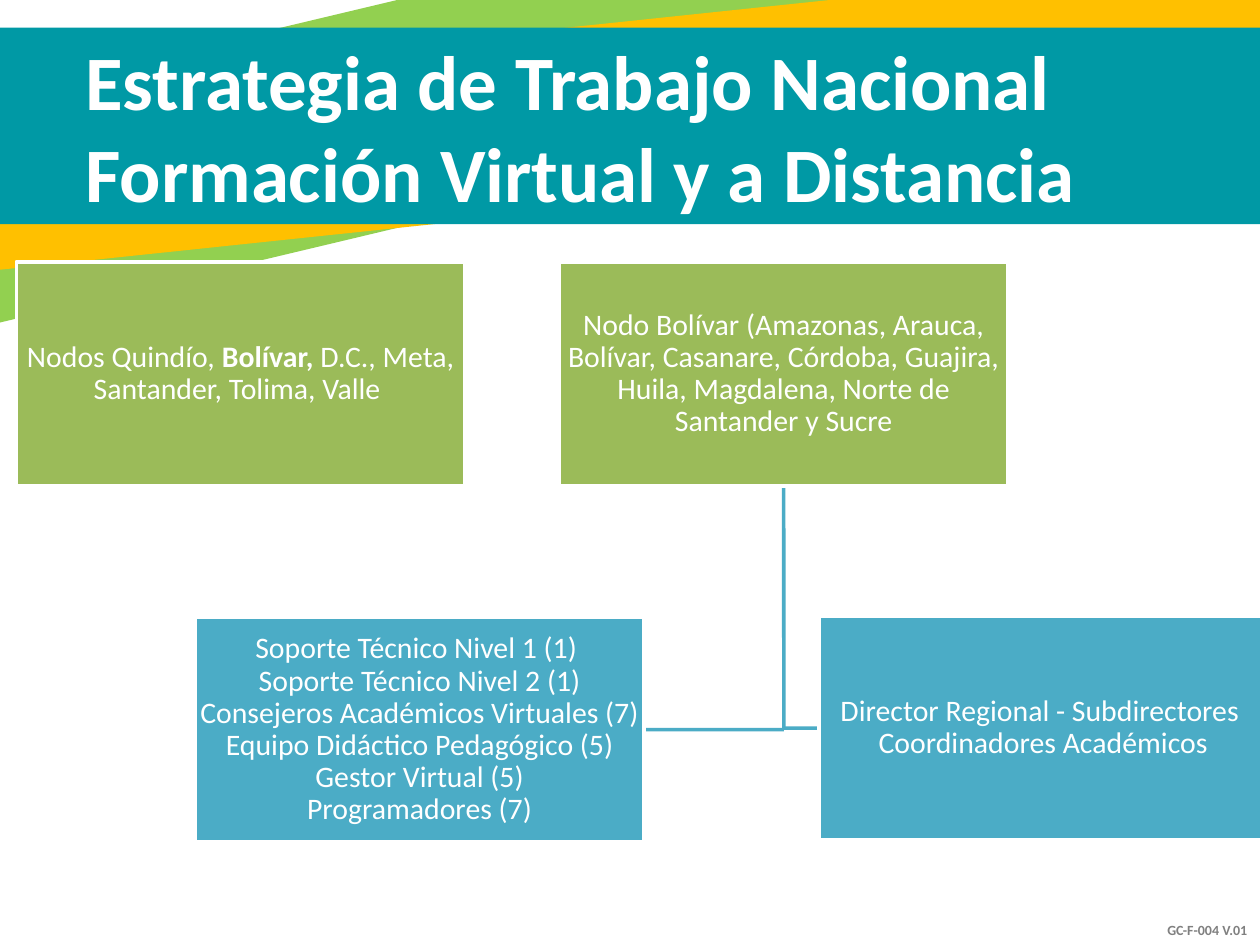
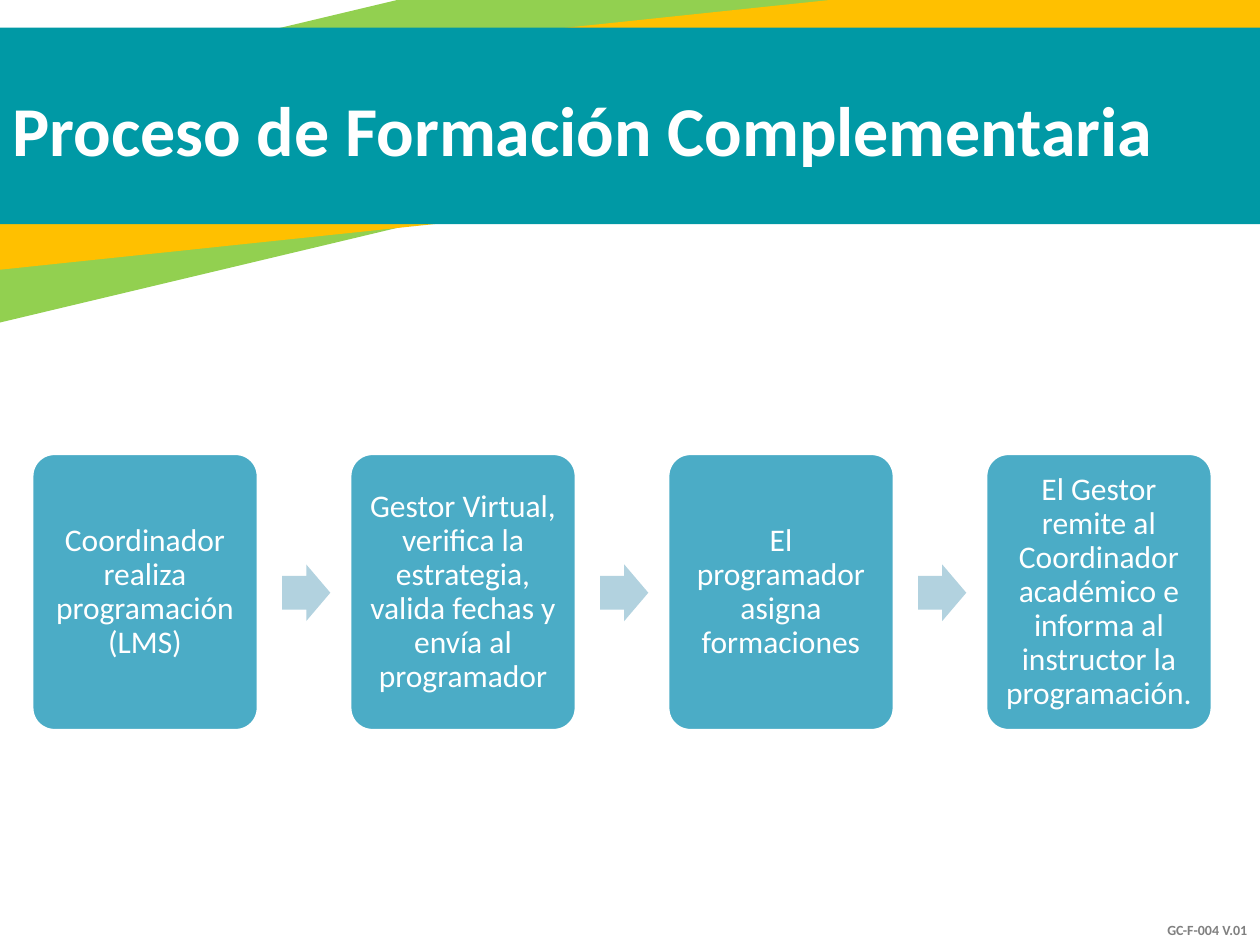
from dataclasses import dataclass

from lxml import etree
from pptx import Presentation
from pptx.dml.color import RGBColor
from pptx.enum import shapes, text
from pptx.oxml import ns
from pptx.util import Cm, Pt


@dataclass(frozen=True)
class Theme:
    font: str = "Calibri"
    white: str = "FFFFFF"
    lime: str = "92D050"
    amber: str = "FFC000"
    teal: str = "0099A5"
    node_green: str = "9BBB59"
    blue: str = "4BACC6"
    pale_blue: str = "B2D2DF"
    gray: str = "808080"
    strategy_title: int = 44
    process_title: int = 40
    step_size: int = 18
    node_size: int = 17
    code_size: int = 8
    line_width: int = 2


@dataclass(frozen=True)
class Area:
    left: float
    top: float
    width: float
    height: float

    def lengths(self) -> tuple:
        return Cm(self.left), Cm(self.top), Cm(self.width), Cm(self.height)


@dataclass(frozen=True)
class Band:
    area: Area
    color: str
    rotation: float = 0


@dataclass(frozen=True)
class Node:
    left: float
    top: float
    color: str
    words: str


THEME = Theme()
RECTANGLE = shapes.MSO_SHAPE.RECTANGLE
CENTER = text.PP_ALIGN.CENTER

BANDS = (
    Band(Area(-6.38, -0.46, 33.17, 4.47), THEME.lime, -13.4),
    Band(Area(-2.79, 0.51, 29.54, 3.66), THEME.amber, -6),
    Band(Area(-2.69, 0.56, 29.54, 3.96), THEME.teal),
)
FORM_CODE = Area(21.26, 17.6, 4.14, 1.45)

NODE_WIDTH, NODE_HEIGHT = 9.04, 4.52
NATIONAL = Node(0.33, 5.28, THEME.node_green,
                "Nodos Quindío, **Bolívar, **D.C., Meta, Santander, Tolima, Valle ")
REGIONAL = Node(11.28, 5.28, THEME.node_green,
                "Nodo Bolívar (Amazonas, Arauca, Bolívar, Casanare, Córdoba, "
                "Guajira, Huila, Magdalena, Norte de Santander y Sucre")
SUPPORT = Node(3.94, 12.45, THEME.blue,
               "Soporte Técnico Nivel 1 (1) \nSoporte Técnico Nivel 2 (1)\n"
               "Consejeros Académicos Virtuales (7)\n"
               "Equipo Didáctico Pedagógico (5)\nGestor Virtual (5)\nProgramadores (7)")
DIRECTORS = Node(16.51, 12.42, THEME.blue,
                 "Director Regional - Subdirectores \nCoordinadores Académicos")

STEPS = (
    "Coordinador realiza programación (LMS)",
    "Gestor Virtual, verifica la estrategia, valida fechas y envía al programador",
    "El programador asigna formaciones",
    "El Gestor remite al Coordinador académico e informa al instructor la programación.",
)
FIRST_STEP = Area(0.64, 9.14, 4.57, 5.59)
FIRST_ARROW = Area(5.69, 11.38, 0.97, 1.14)
STEP_PITCH = 6.41


def rgb(color: str) -> RGBColor:
    return RGBColor.from_string(color)


def write(shape, words: str, *, size: int, color: str = THEME.white, bold: bool = False,
          align=text.PP_ALIGN.LEFT, anchor=text.MSO_ANCHOR.MIDDLE,
          margins: tuple = (0.25, 0.13), spacing: float = 1.0) -> None:
    frame = shape.text_frame
    frame.word_wrap = True
    frame.auto_size = text.MSO_AUTO_SIZE.NONE
    frame.vertical_anchor = anchor
    frame.margin_left = frame.margin_right = Cm(margins[0])
    frame.margin_top = frame.margin_bottom = Cm(margins[1])
    paragraph = frame.paragraphs[0]
    paragraph.alignment = align
    paragraph.line_spacing = spacing
    for row, line in enumerate(words.split("\n")):
        if row:
            paragraph.add_line_break()
        for index, part in enumerate(line.split("**")):
            run = paragraph.add_run()
            run.text = part
            run.font.name = THEME.font
            run.font.size = Pt(size)
            run.font.bold = bold or index % 2 == 1
            run.font.color.rgb = rgb(color)


def draw_shape(slide, kind, area: Area, color: str, outlined: bool = False):
    shape = slide.shapes.add_shape(kind, *area.lengths())
    shape.shadow.inherit = False
    shape.fill.solid()
    shape.fill.fore_color.rgb = rgb(color)
    if outlined:
        shape.line.color.rgb = rgb(THEME.white)
        shape.line.width = Pt(THEME.line_width)
    else:
        shape.line.fill.background()
    return shape


def start_slide(deck, heading: str, area: Area, size: int):
    slide = deck.slides.add_slide(deck.slide_layouts[5])
    form_code = slide.shapes.add_textbox(*FORM_CODE.lengths())
    write(form_code, "GC-F-004 V.01", size=THEME.code_size, color=THEME.gray, bold=True,
          align=text.PP_ALIGN.RIGHT, anchor=text.MSO_ANCHOR.BOTTOM)
    for band in BANDS:
        draw_shape(slide, RECTANGLE, band.area, band.color).rotation = band.rotation
    title = slide.shapes.title
    title.left, title.top, title.width, title.height = area.lengths()
    write(title, heading, size=size, bold=True)
    title.element.getparent().append(title.element)
    return slide


def draw_branch(slide, x: float, y: float):
    branch = slide.shapes.add_connector(shapes.MSO_CONNECTOR.STRAIGHT,
                                        Cm(x), Cm(y), Cm(x), Cm(y))
    branch.line.color.rgb = rgb(THEME.blue)
    branch.line.width = Pt(THEME.line_width)
    etree.SubElement(branch.element.spPr, ns.qn("a:effectLst"))
    return branch


def draw_node(slide, node: Node):
    area = Area(node.left, node.top, NODE_WIDTH, NODE_HEIGHT)
    box = draw_shape(slide, RECTANGLE, area, node.color, outlined=True)
    write(box, node.words, size=THEME.node_size, align=CENTER,
          margins=(0.03, 0.03), spacing=0.9)
    return box


def build_strategy(deck) -> None:
    slide = start_slide(deck, "Estrategia de Trabajo Nacional Formación Virtual y a Distancia",
                        Area(1.47, 0.91, 20.52, 3.25), THEME.strategy_title)
    junction_x = REGIONAL.left + NODE_WIDTH / 2
    trunk, to_support, to_directors = (
        draw_branch(slide, junction_x, node.top + NODE_HEIGHT / 2)
        for node in (SUPPORT, SUPPORT, DIRECTORS)
    )
    draw_node(slide, NATIONAL)
    trunk.begin_connect(draw_node(slide, REGIONAL), 2)
    to_support.end_connect(draw_node(slide, SUPPORT), 3)
    to_directors.end_connect(draw_node(slide, DIRECTORS), 1)


def build_process(deck) -> None:
    slide = start_slide(deck, "Proceso de Formación Complementaria",
                        Area(0, 1.3, 25.12, 2.59), THEME.process_title)
    for index, words in enumerate(STEPS):
        shift = index * STEP_PITCH
        area = Area(FIRST_STEP.left + shift, FIRST_STEP.top,
                    FIRST_STEP.width, FIRST_STEP.height)
        step = draw_shape(slide, shapes.MSO_SHAPE.ROUNDED_RECTANGLE, area,
                          THEME.blue, outlined=True)
        step.adjustments[0] = 0.1
        write(step, words, size=THEME.step_size, align=CENTER,
              margins=(0.18, 0.18), spacing=0.9)
        if index < len(STEPS) - 1:
            area = Area(FIRST_ARROW.left + shift, FIRST_ARROW.top,
                        FIRST_ARROW.width, FIRST_ARROW.height)
            arrow = draw_shape(slide, shapes.MSO_SHAPE.RIGHT_ARROW, area, THEME.pale_blue)
            arrow.adjustments[0] = 0.6


def main() -> None:
    deck = Presentation()
    deck.slide_width, deck.slide_height = Cm(25.4), Cm(19.05)
    build_strategy(deck)
    build_process(deck)
    deck.save("out.pptx")


if __name__ == "__main__":
    main()
